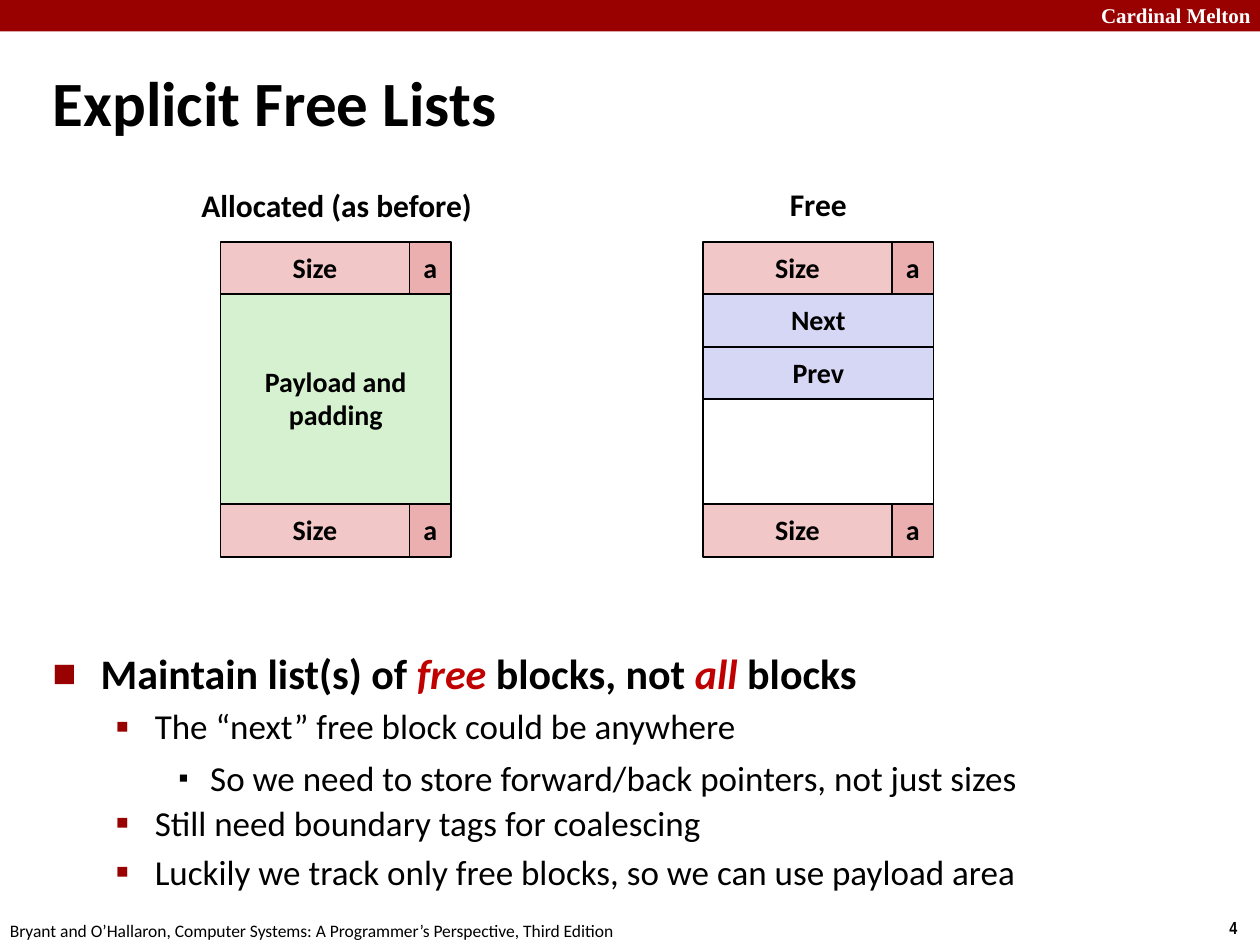
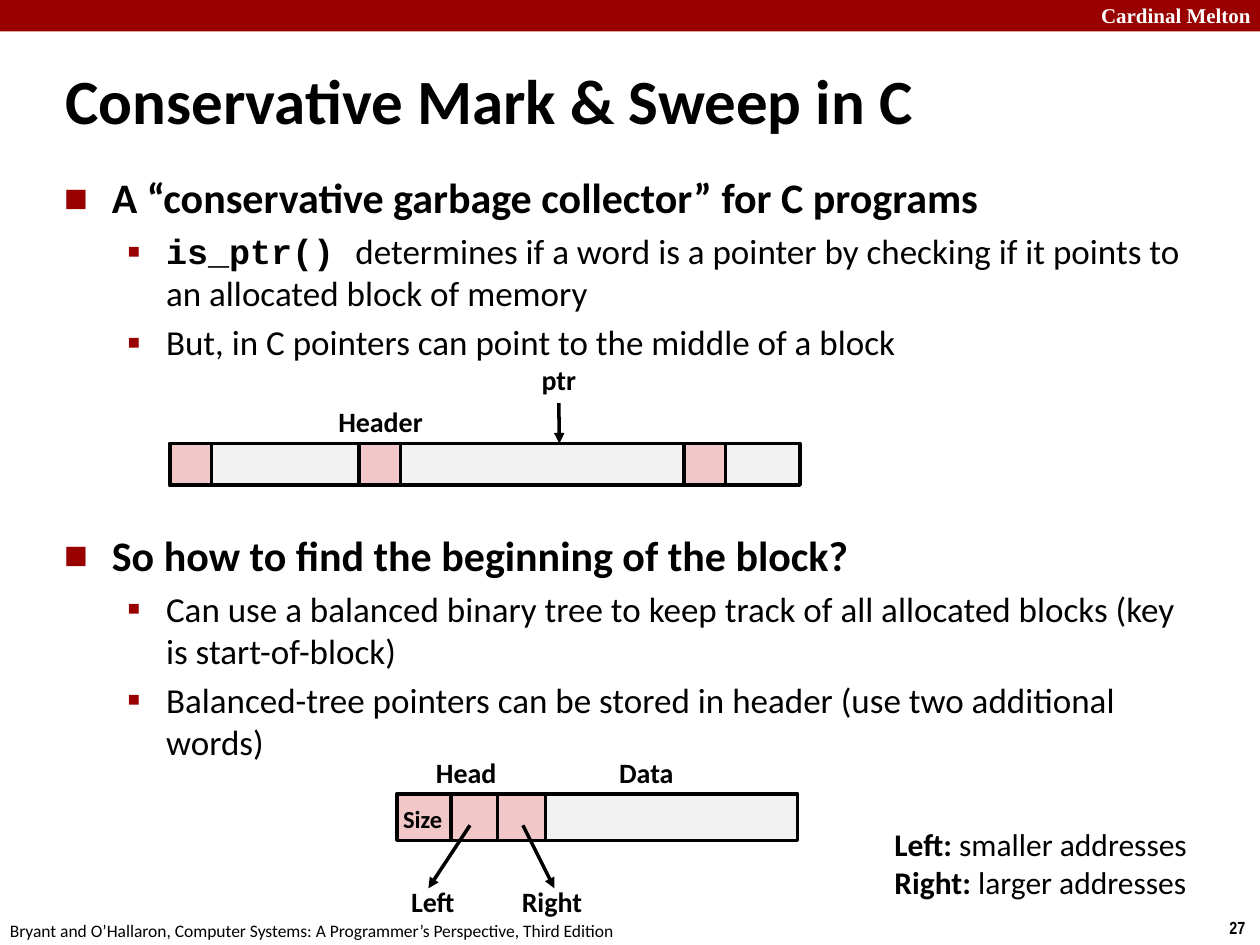
from dataclasses import dataclass

from lxml import etree
from pptx import Presentation
from pptx.dml.color import RGBColor
from pptx.enum.shapes import MSO_CONNECTOR, MSO_SHAPE
from pptx.enum.text import MSO_ANCHOR, PP_ALIGN
from pptx.oxml.ns import qn
from pptx.util import Inches, Pt

RECT = MSO_SHAPE.RECTANGLE
STRAIGHT = MSO_CONNECTOR.STRAIGHT
LEFT, CENTER = PP_ALIGN.LEFT, PP_ALIGN.CENTER
TOP, MIDDLE = MSO_ANCHOR.TOP, MSO_ANCHOR.MIDDLE

BLACK = RGBColor(0x00, 0x00, 0x00)
WHITE = RGBColor(0xFF, 0xFF, 0xFF)
CRIMSON = RGBColor(0x99, 0x00, 0x00)
EMPHASIS = RGBColor(0xC0, 0x00, 0x00)
PINK = RGBColor(0xF1, 0xC7, 0xC7)
ROSE = RGBColor(0xEB, 0xAF, 0xAF)
GREEN = RGBColor(0xD5, 0xF1, 0xCF)
LAVENDER = RGBColor(0xD6, 0xD6, 0xF5)
GRAY = RGBColor(0xF2, 0xF2, 0xF2)

SANS = "Calibri"
NARROW = "Arial Narrow"
SERIF = "Times New Roman"
MONO = "Courier New"

SCHOOL = "Cardinal Melton"
BOOK = "Bryant and O’Hallaron, Computer Systems: A Programmer’s Perspective, Third Edition"


@dataclass
class Level:
    margin: float
    hang: float
    char: str
    percent: int
    color: RGBColor
    size: int
    bold: bool
    before: int
    line: float


LEVELS = [
    Level(0.38, 0.38, "■", 60, CRIMSON, 24, True, 5, 0.95),
    Level(0.81, 0.31, "▪", 110, CRIMSON, 20, False, 4, 1.0),
    Level(1.25, 0.25, "▪", 80, BLACK, 20, False, 4, 1.07),
]


class Deck:
    def __init__(self):
        self.prs = Presentation()
        self.prs.slide_width, self.prs.slide_height = Inches(10), Inches(7.5)
        self.s = None

    def slide(self, number, title, title_box):
        self.s = self.prs.slides.add_slide(self.prs.slide_layouts[6])
        self.rect(0, 0, 10, 0.25, CRIMSON, line=None)
        self.text((8.64, -0.03, 1.43, 0.3), [SCHOOL], 12, font=SERIF, color=WHITE)
        self.text((9.66, 7.23, 0.34, 0.27), [str(number)], 10, font=NARROW)
        self.text((-0.02, 7.25, 5.08, 0.27), [BOOK], 10, bold=False)
        self.text(title_box, [title], 36, anchor=MIDDLE, wrap=True, spacing=0.87)

    def runs(self, p, parts, size, bold=True, font=SANS, color=BLACK):
        for part in [parts] if isinstance(parts, str) else parts:
            words, style = (part, {}) if isinstance(part, str) else part
            r = p.add_run()
            r.text = words
            r.font.size = Pt(size)
            r.font.name = style.get("font", font)
            r.font.bold = style.get("bold", bold)
            r.font.italic = style.get("italic", False)
            r.font.color.rgb = style.get("color", color)

    def fill_text(self, tf, lines, size, align=LEFT, spacing=1.0, **style):
        for i, parts in enumerate(lines):
            p = tf.add_paragraph() if i else tf.paragraphs[0]
            p.alignment = align
            p.line_spacing = spacing
            self.runs(p, parts, size, **style)

    def text(self, box, lines, size, anchor=TOP, wrap=False, **style):
        sp = self.s.shapes.add_textbox(*map(Inches, box))
        tf = sp.text_frame
        tf.word_wrap = wrap
        tf.vertical_anchor = anchor
        self.fill_text(tf, lines, size, **style)
        return sp

    def label(self, x, y, w, words, size=16, h=0.37):
        return self.text((x, y, w, h), [words], size, align=CENTER)

    def rect(self, x, y, w, h, fill, lines=(), line=1):
        sp = self.s.shapes.add_shape(RECT, *map(Inches, (x, y, w, h)))
        sp.shadow.inherit = False
        sp.fill.solid()
        sp.fill.fore_color.rgb = fill
        if line is None:
            sp.line.fill.background()
        else:
            sp.line.color.rgb = BLACK
            sp.line.width = Pt(line)
        tf = sp.text_frame
        tf.word_wrap = False
        tf.vertical_anchor = MIDDLE
        self.fill_text(tf, lines, 16, align=CENTER, spacing=0.98)
        return sp

    def arrow(self, x1, y1, x2, y2):
        c = self.s.shapes.add_connector(STRAIGHT, *map(Inches, (x1, y1, x2, y2)))
        c.line.color.rgb = BLACK
        c.line.width = Pt(2)
        etree.SubElement(c.line._get_or_add_ln(), qn("a:tailEnd"), type="triangle")
        etree.SubElement(c._element.spPr, qn("a:effectLst"))
        return c

    def bullets(self, box, items):
        tf = self.s.shapes.add_textbox(*map(Inches, box)).text_frame
        tf.word_wrap = True
        for i, (depth, parts, spacing) in enumerate(items):
            level = LEVELS[depth]
            p = tf.add_paragraph() if i else tf.paragraphs[0]
            p.level = depth
            p.space_before = Pt(spacing.get("before", level.before))
            p.line_spacing = spacing.get("line", level.line)
            pPr = p._p.get_or_add_pPr()
            pPr.set("marL", str(Inches(level.margin)))
            pPr.set("indent", str(-Inches(level.hang)))
            clr = etree.SubElement(pPr, qn("a:buClr"))
            etree.SubElement(clr, qn("a:srgbClr"), val=str(level.color))
            etree.SubElement(pPr, qn("a:buSzPct"), val=str(level.percent * 1000))
            etree.SubElement(pPr, qn("a:buFont"), typeface=SANS)
            etree.SubElement(pPr, qn("a:buChar"), char=level.char)
            self.runs(p, parts, level.size, level.bold)


def explicit_free_lists(deck):
    deck.slide(4, "Explicit Free Lists", (0.32, 0.53, 6.64, 0.63))
    key = {"color": EMPHASIS, "italic": True}
    deck.bullets((0.32, 5.15, 9.09, 2.02), [
        (0, ["Maintain list(s) of ", ("free", key), " blocks, not ", ("all", key), " blocks"],
         {"line": 0.85}),
        (1, "The “next” free block could be anywhere", {}),
        (2, "So we need to store forward/back pointers, not just sizes", {}),
        (1, "Still need boundary tags for coalescing", {"line": 0.9}),
        (1, "Luckily we track only free blocks, so we can use payload area", {}),
    ])

    block_top, row, size_w, flag_w = 1.92, 5 / 12, 1.5, 0.33
    allocated = [(4, GREEN, ["Payload and", "padding"])]
    free = [(1, LAVENDER, ["Next"]), (1, LAVENDER, ["Prev"]), (2, WHITE, [])]
    for x, fields in ((1.75, allocated), (5.58, free)):
        y = block_top + row
        for rows, fill, lines in fields:
            deck.rect(x, y, size_w + flag_w, rows * row, fill, lines)
            y += rows * row
        for tag_y in (block_top, y):
            deck.rect(x, tag_y, size_w, row, PINK, ["Size"])
            deck.rect(x + size_w, tag_y, flag_w, row, ROSE, ["a"])

    deck.text((1.5, 1.43, 2.37, 0.4), ["Allocated (as before)"], 18)
    deck.text((6.17, 1.42, 0.66, 0.4), ["Free"], 18)


def conservative_mark_sweep(deck):
    deck.slide(27, "Conservative Mark & Sweep in C", (0.42, 0.41, 8.75, 0.84))
    code = {"font": MONO, "bold": True}
    deck.bullets((0.41, 1.34, 9.09, 4.92), [
        (0, "A “conservative garbage collector” for C programs", {}),
        (1, [("is_ptr() ", code), "determines if a word is a pointer by checking "
             "if it points to an allocated block of memory"], {}),
        (1, "But, in C pointers can point to the middle of a block", {}),
        (0, "So how to find the beginning of the block?", {"before": 97}),
        (1, "Can use a balanced binary tree to keep track of all allocated blocks "
            "(key is start-of-block)", {}),
        (1, "Balanced-tree pointers can be stored in header "
            "(use two additional words)", {}),
    ])

    heap_y, word = 3.52, 0.33
    for x, w in ((1.35, 1.5), (2.85, 3.5)):
        deck.rect(x, heap_y, w, word, GRAY, line=2)
    for x in (1.35, 2.85, 5.43):
        deck.rect(x, heap_y, word, word, PINK, line=2)
    deck.label(2.58, 3.16, 0.88, "Header")
    ptr = deck.label(4.19, 2.83, 0.49, "ptr")
    deck.arrow(4.43, 3.2, 4.44, heap_y).begin_connect(ptr, 2)

    node_y, node_h = 6.3, 0.37
    deck.rect(3.15, node_y, 1.2, node_h, PINK, line=2)
    deck.rect(4.33, node_y, 2, node_h, GRAY, line=2)
    deck.rect(3.58, node_y, 0.37, node_h, PINK, line=2)
    deck.label(3.1, 6.33, 0.51, "Size", size=14, h=0.34)
    for x, y, w, words in ((3.36, 5.95, 0.68, "Head"), (4.81, 5.95, 0.64, "Data"),
                           (3.16, 6.97, 0.55, "Left"), (4.04, 6.97, 0.68, "Right")):
        deck.label(x, y, w, words)
    for start, end in ((3.73, 3.4), (4.15, 4.4)):
        deck.arrow(start, 6.55, end, 7.05)

    plain = {"bold": False}
    deck.text((7, 6.5, 2.59, 0.71), [["Left:", (" smaller addresses", plain)],
                                     ["Right:", (" larger addresses", plain)]], 18)


def main():
    deck = Deck()
    explicit_free_lists(deck)
    conservative_mark_sweep(deck)
    deck.prs.save("out.pptx")


if __name__ == "__main__":
    main()
